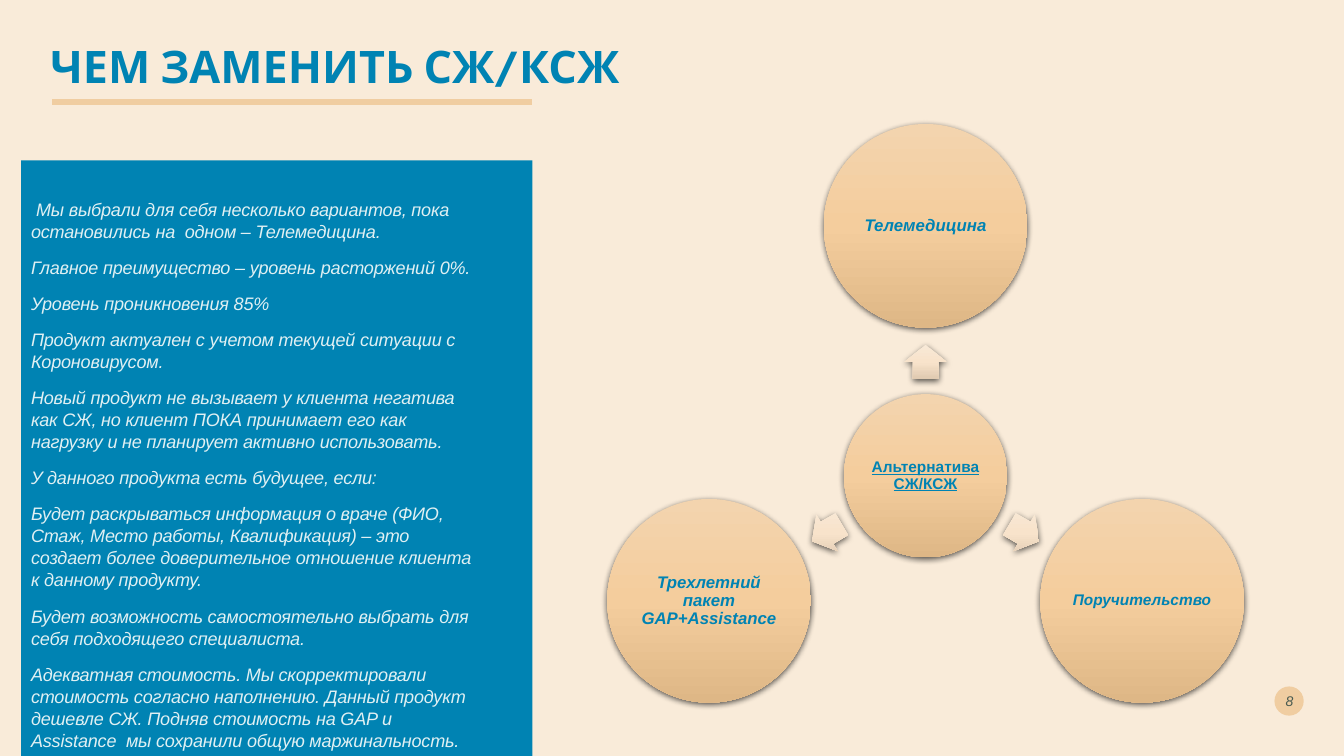
from math import cos, radians, sin

from lxml import etree
from pptx import Presentation
from pptx import util as u
from pptx.dml.color import RGBColor
from pptx.enum import shapes, text
from pptx.oxml import parse_xml
from pptx.oxml.ns import nsdecls, qn

PX = 9144  # 100 px to the inch
CREAM = RGBColor(0xF9, 0xEB, 0xD9)
BLUE = RGBColor(0x00, 0x83, 0xB3)
SAND = RGBColor(0xF0, 0xCD, 0xA1)
PALE = RGBColor(0xE0, 0xF0, 0xF3)
SLATE = RGBColor(0x48, 0x5A, 0x50)
DISC = ("F3D4AE", "F4CD9D", "DEB786")
ARROW = ("F8E9D7", "F8E3CB", "E0CAB1")

HUB = (918, 472)
REACH = 248
GAP = 113
OPTIONS = [
    ("Телемедицина", 12, -90),
    ("Поручительство", 11, 30),
    ("Трехлетний пакет GAP+Assistance", 12, 150),
]
NOTES = [
    "Мы выбрали для себя несколько вариантов, пока остановились на  одном – Телемедицина.",
    "Главное преимущество – уровень расторжений 0%.",
    "Уровень проникновения 85%",
    "Продукт актуален с учетом текущей ситуации с Короновирусом.",
    "Новый продукт не вызывает у клиента негатива как СЖ, но клиент ПОКА "
    "принимает его как нагрузку и не планирует активно использовать.",
    "У данного продукта есть будущее, если:",
    "Будет раскрываться информация о враче (ФИО, Стаж, Место работы, "
    "Квалификация) – это создает более доверительное отношение клиента к данному продукту.",
    "Будет возможность самостоятельно выбрать для себя подходящего специалиста.",
    "Адекватная стоимость. Мы скорректировали стоимость согласно наполнению. "
    "Данный продукт дешевле СЖ. Подняв стоимость на GAP и Assistance  мы "
    "сохранили общую маржинальность.",
]


def px(*nums):
    return [u.Emu(round(n * PX)) for n in nums]


def add_shape(slide, kind, box, fill=None):
    shape = slide.shapes.add_shape(kind, *px(*box))
    shape.shadow.inherit = False
    shape.line.fill.background()
    if fill is not None:
        shape.fill.solid()
        shape.fill.fore_color.rgb = fill
    return shape


def add_round(slide, kind, mid, size, tones):
    """Centre a shape on a point, with a vertical gradient and a soft shadow."""
    wide, high = size
    box = (mid[0] - wide / 2, mid[1] - high / 2, wide, high)
    shape = add_shape(slide, kind, box)
    stops = "".join(
        f'<a:gs pos="{i * 50000}"><a:srgbClr val="{tone}"/></a:gs>'
        for i, tone in enumerate(tones)
    )
    props = shape.element.spPr
    props.find(qn("a:ln")).addprevious(parse_xml(
        f'<a:gradFill {nsdecls("a")} rotWithShape="0"><a:gsLst>{stops}</a:gsLst>'
        '<a:lin ang="5400000" scaled="0"/></a:gradFill>'
    ))
    props.find(qn("a:effectLst")).append(parse_xml(
        f'<a:outerShdw {nsdecls("a")} blurRad="57150" dist="19050" dir="5400000" '
        'algn="ctr" rotWithShape="0"><a:srgbClr val="000000">'
        '<a:alpha val="63000"/></a:srgbClr></a:outerShdw>'
    ))
    return shape


def set_text(shape, lines, size, color, inset, name="Arial", bold=False, italic=False,
             align=text.PP_ALIGN.LEFT, anchor=text.MSO_ANCHOR.MIDDLE, space=0.9, after=0):
    frame = shape.text_frame
    frame.word_wrap = True
    frame.vertical_anchor = anchor
    (frame.margin_left, frame.margin_top,
     frame.margin_right, frame.margin_bottom) = px(*inset)
    frame.text = "\n".join(lines)
    for para in frame.paragraphs:
        para.alignment = align
        para.line_spacing = space
        para.space_after = u.Pt(after)
        font = para.font
        font.name, font.size = name, u.Pt(size)
        font.bold, font.italic = bold, italic
        font.color.rgb = color
    return frame


def add_disc(slide, mid, width, label, size, italic=True):
    disc = add_round(slide, shapes.MSO_SHAPE.OVAL, mid, (width, width), DISC)
    return set_text(disc, [label], size, BLUE, (1, 2, 1, 2), bold=True,
                    italic=italic, align=text.PP_ALIGN.CENTER)


def add_arrow(slide, mid, angle):
    arrow = add_round(slide, shapes.MSO_SHAPE.RIGHT_ARROW, mid, (34, 42), ARROW)
    arrow.adjustments[0], arrow.adjustments[1] = 0.6, 0.5
    arrow.rotation = angle % 360


def add_rule(slide, ends, color, width):
    rule = slide.shapes.add_connector(shapes.MSO_CONNECTOR.STRAIGHT, *px(*ends))
    rule.line.color.rgb = color
    rule.line.width = u.Pt(width)
    etree.SubElement(rule.element.spPr, qn("a:effectLst"))


def add_wheel(slide):
    hub = add_disc(slide, HUB, 162, "Альтернатива СЖ/КСЖ", 11, italic=False)
    hub.paragraphs[0].font.underline = True
    for label, size, angle in OPTIONS:
        turn = radians(angle)

        def spot(dist):
            return HUB[0] + dist * cos(turn), HUB[1] + dist * sin(turn)

        add_arrow(slide, spot(GAP), angle)
        add_disc(slide, spot(REACH), 202, label, size)


def add_panel(slide):
    panel = add_shape(slide, shapes.MSO_SHAPE.RECTANGLE, (21, 159, 507, 591), BLUE)
    frame = set_text(panel, NOTES, 12.9, PALE, (10, 37, 50, 0), italic=True,
                     anchor=text.MSO_ANCHOR.TOP, space=1.02, after=10)
    frame.paragraphs[0]._p.get_or_add_pPr().set("indent", str(5 * PX))
    for para in frame.paragraphs:
        for run in para.runs:
            run.font._element.set("spc", "-10")


def main():
    deck = Presentation()
    deck.slide_width, deck.slide_height = u.Inches(13.33), u.Inches(7.5)
    slide = deck.slides.add_slide(deck.slide_layouts[6])
    slide.background.fill.solid()
    slide.background.fill.fore_color.rgb = CREAM

    badge = add_shape(slide, shapes.MSO_SHAPE.OVAL, (1264, 681, 29, 29), SAND)
    set_text(badge, ["8"], 10, SLATE, (1, 0, 0, 0), italic=True,
             align=text.PP_ALIGN.CENTER, space=1)
    title = slide.shapes.add_textbox(*px(40, 35, 861, 66))
    set_text(title, ["ЧЕМ ЗАМЕНИТЬ СЖ/КСЖ"], 32, BLUE, (10, 5, 10, 5),
             name="Cabin", bold=True)
    add_wheel(slide)
    add_rule(slide, (52, 101, 528, 101), SAND, 4.32)
    add_panel(slide)
    deck.save("out.pptx")


if __name__ == "__main__":
    main()
